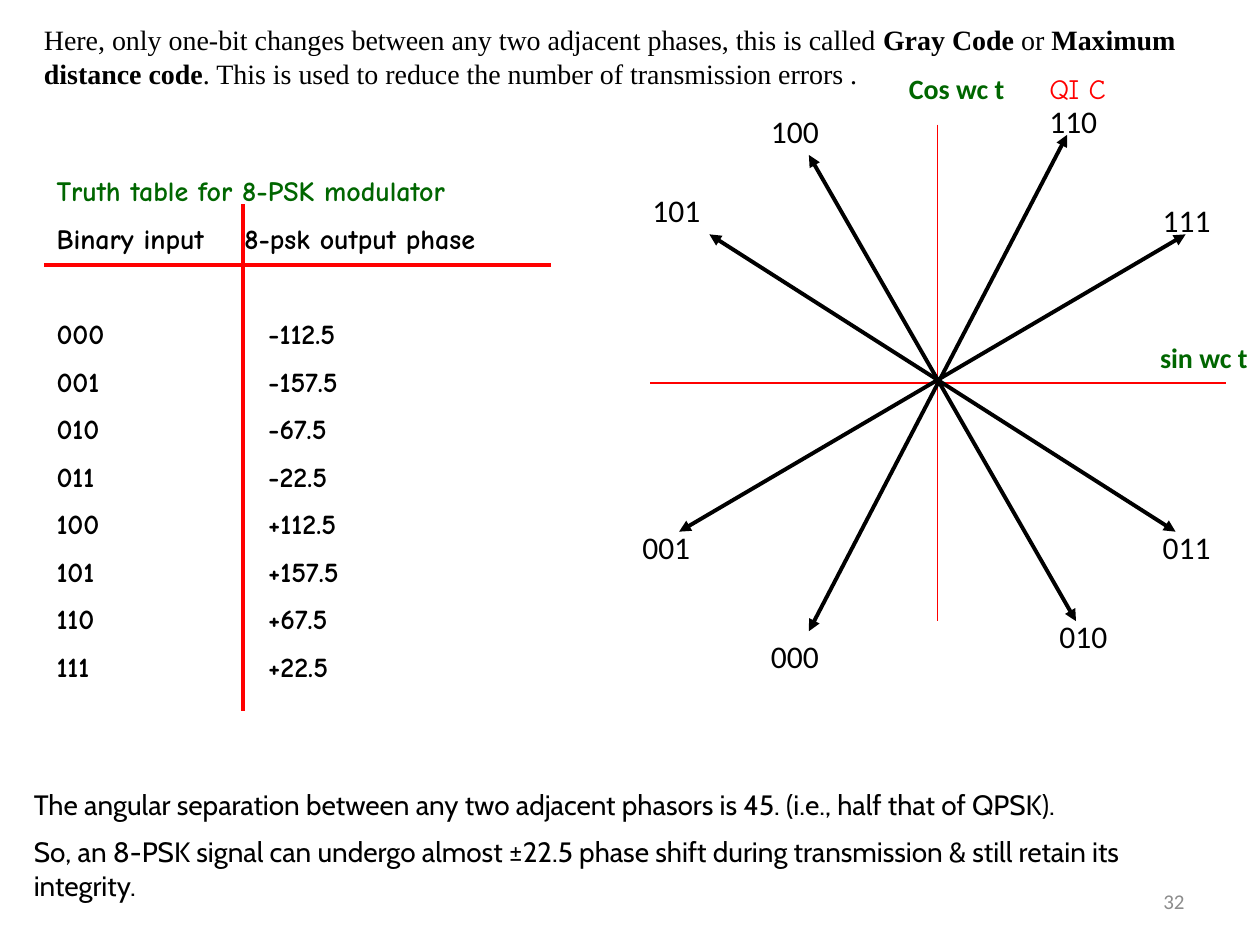
"""Builds the 8-PSK truth table and phasor diagram slide."""
from dataclasses import dataclass

from lxml import etree
from pptx import Presentation
from pptx import util as u
from pptx.dml.color import RGBColor
from pptx.enum import shapes, text
from pptx.oxml.ns import qn

COLS, ROWS = 100, 75
CELL = u.Inches(0.1)


@dataclass(frozen=True)
class Theme:
    """Colours, fonts and type sizes of the slide."""
    ink: str = "000000"
    green: str = "006600"
    red: str = "FF0000"
    gray: str = "8C8C8C"
    serif: str = "Times New Roman"
    sans: str = "Calibri"
    comic: str = "Comic Neue"
    cabin: str = "Cabin"
    body: int = 16
    code: int = 18
    foot: int = 12
    gap: int = 8
    thick: float = 2.25
    thin: float = 0.75


T = Theme()
LEFT, RIGHT = text.PP_ALIGN.LEFT, text.PP_ALIGN.RIGHT
INTRO = [
    ("Here, only one-bit changes between any two adjacent phases, this is called ", False),
    ("Gray Code", True),
    (" or ", False),
    ("Maximum distance code", True),
    (". This is used to reduce the number of transmission errors .", False),
]
PHASES = [
    ("000", "-112.5"), ("001", "-157.5"), ("010", "-67.5"), ("011", "-22.5"),
    ("100", "+112.5"), ("101", "+157.5"), ("110", "+67.5"), ("111", "+22.5"),
]
NOTES = [
    "The angular separation between any two adjacent phasors is 45. "
    "(i.e., half that of QPSK).",
    "So, an 8-PSK signal can undergo almost ±22.5 phase shift during "
    "transmission & still retain its integrity.",
]
AXES = [(74.4, 9.9, 74.4, 49.3), (51.6, 30.4, 97.3, 30.4)]
RULES = [(19.3, 16.2, 19.3, 56.4), (3.5, 21, 43.7, 21)]
PHASORS = [
    (84.7, 10.7, 64.2, 50.1), (94.1, 18.6, 53.9, 42.2),
    (64.2, 12.3, 85.4, 49.3), (56.3, 18.6, 93.3, 42.2),
]
CODES = [
    ("110", 82.3, 7.6), ("100", 60.2, 8.4), ("101", 50.8, 14.7),
    ("011", 91.3, 41.4), ("010", 83.1, 48.5), ("000", 60.2, 50.1),
    ("001", 50, 41.4), ("111", 91.3, 15.5),
]


def cells(*nums):
    """Turn grid counts into lengths."""
    return [round(n * CELL) for n in nums]


def style(para, face, size, color, bold=False):
    """Format every run of a paragraph."""
    for run in para.runs:
        font = run.font
        font.name, font.size, font.bold = face, u.Pt(size), bold
        font.color.rgb = RGBColor.from_string(color)


def label(slide, area, lines, face, size, color, bold=False, align=LEFT):
    """Add a text box with one paragraph per line."""
    frame = slide.shapes.add_textbox(*cells(*area)).text_frame
    frame.word_wrap = True
    frame.text = "\n".join(lines)
    for num, para in enumerate(frame.paragraphs):
        para.alignment = align
        if num:
            para.space_before = u.Pt(T.gap)
        style(para, face, size, color, bold)
    return frame


def line(slide, ends, color, width, arrows=False):
    """Draw a straight line, with arrowheads at both ends if asked."""
    link = slide.shapes.add_connector(
        shapes.MSO_CONNECTOR.STRAIGHT, *cells(*ends))
    link.line.color.rgb = RGBColor.from_string(color)
    link.line.width = u.Pt(width)
    props = link._element.spPr
    if arrows:
        for tag in ("a:headEnd", "a:tailEnd"):
            etree.SubElement(props.find(qn("a:ln")), qn(tag), type="triangle")
    etree.SubElement(props, qn("a:effectLst"))


def tab(para, cols):
    """Set one left tab stop on a paragraph."""
    stops = etree.SubElement(para._p.get_or_add_pPr(), qn("a:tabLst"))
    etree.SubElement(stops, qn("a:tab"), pos=str(cells(cols)[0]), algn="l")


def intro(slide):
    """Add the opening text with its bold terms."""
    frame = label(slide, (2.5, 1.3, 94.8, 6.4), [""], T.serif, T.body, T.ink)
    para = frame.paragraphs[0]
    for words, _ in INTRO:
        para.add_run().text = words
    style(para, T.serif, T.body, T.ink)
    for run, (_, bold) in zip(para.runs, INTRO):
        run.font.bold = bold


def truth(slide):
    """Add the truth table with its two rules."""
    rows = ["Truth table for 8-PSK modulator",
            "Binary input\t8-psk output phase"]
    rows += ["\t".join(pair) for pair in PHASES]
    frame = label(slide, (3.5, 13.3, 40.9, 44.1), rows,
                  T.comic, T.body, T.ink, True)
    title, head, *body = frame.paragraphs
    style(title, T.comic, T.body, T.green, True)
    tab(head, 14.9)
    body[0].space_before = u.Pt(T.gap * 2 + T.body * 1.2)
    for para in body:
        tab(para, 16.8)
    for ends in RULES:
        line(slide, ends, T.red, T.thick)


def diagram(slide):
    """Draw the axes, the phasors and their labels."""
    for ends in AXES:
        line(slide, ends, T.red, T.thin)
    for ends in PHASORS:
        line(slide, ends, T.ink, T.thick, True)
    for words, x, y in (("Cos wc t", 68.1, 5.2), ("sin wc t", 87.4, 26.5)):
        label(slide, (x, y, 12.6, 3.7), [words],
              T.sans, T.body, T.green, True, RIGHT)
    for code, x, y in CODES:
        label(slide, (x, y, 8.7, 4), [code], T.sans, T.code, T.ink)
    label(slide, (82.3, 5.2, 17.7, 3.7), ["QI C"], T.comic, T.body, T.red)


def main():
    """Build and save the slide."""
    deck = Presentation()
    deck.slide_width, deck.slide_height = cells(COLS, ROWS)
    slide = deck.slides.add_slide(deck.slide_layouts[6])
    truth(slide)
    diagram(slide)
    label(slide, (1.7, 62, 96.7, 10.4), NOTES, T.cabin, T.body, T.ink)
    intro(slide)
    foot = label(slide, (71.7, 69.5, 23.3, 4), ["32"],
                 T.sans, T.foot, T.gray, align=RIGHT)
    foot.vertical_anchor = text.MSO_ANCHOR.MIDDLE
    deck.save("out.pptx")


if __name__ == "__main__":
    main()
